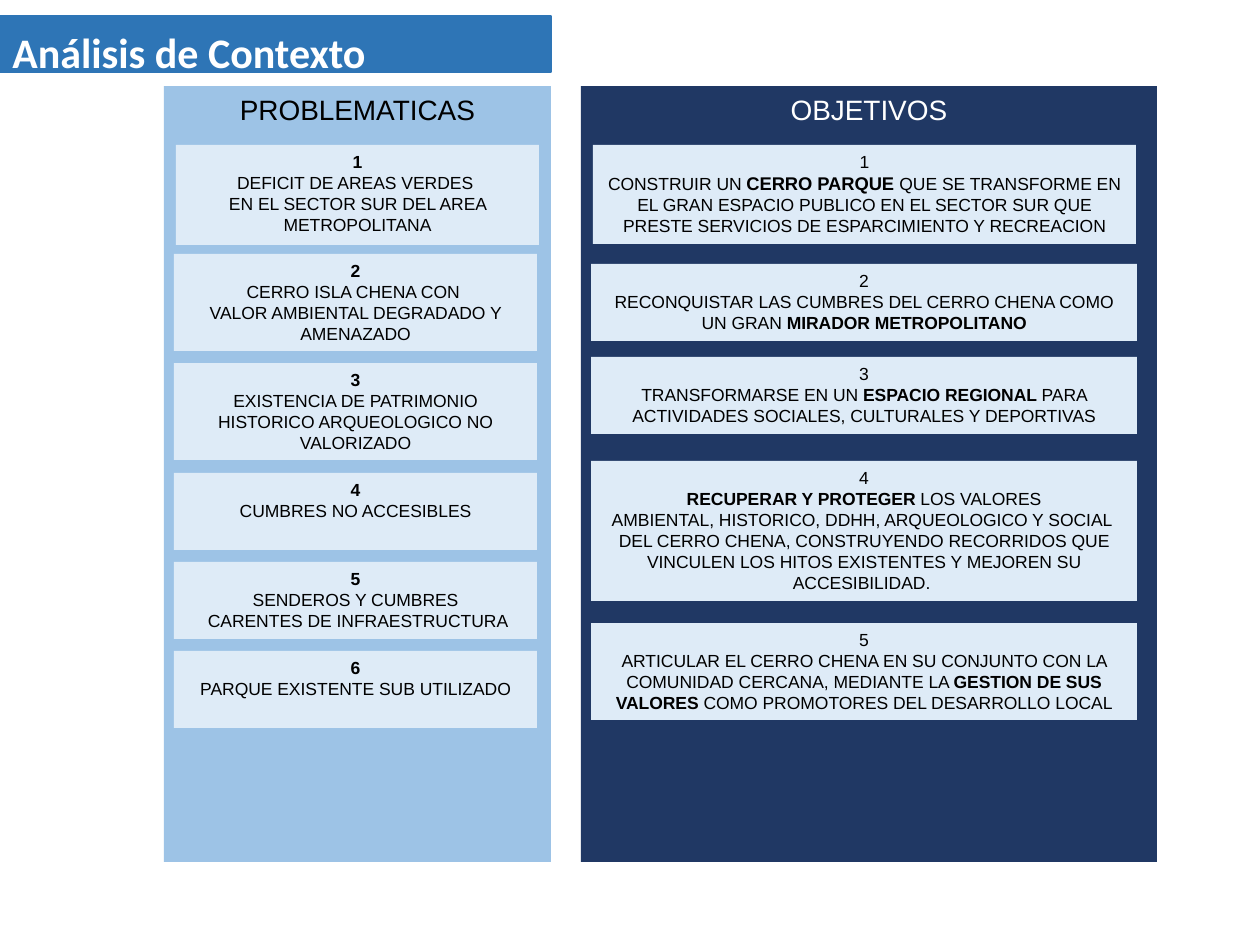
import pptx
import pptx.dml.color
import pptx.enum.shapes
import pptx.enum.text
import pptx.util

RGB = pptx.dml.color.RGBColor
ALIGN = pptx.enum.text.PP_ALIGN
BLACK = RGB(0x00, 0x00, 0x00)
WHITE = RGB(0xFF, 0xFF, 0xFF)
TITLE_BLUE = RGB(0x2E, 0x75, 0xB6)
LIGHT_BLUE = RGB(0x9D, 0xC3, 0xE6)
PALE_BLUE = RGB(0xDE, 0xEB, 0xF7)
NAVY = RGB(0x20, 0x38, 0x64)

PROBLEMS = [
    (176, 145, 363, 100, ["*1*", "DEFICIT DE AREAS VERDES ", "EN EL SECTOR SUR DEL AREA METROPOLITANA"]),
    (174, 254, 363, 97, ["*2*", "CERRO ISLA CHENA CON ", "VALOR AMBIENTAL DEGRADADO Y AMENAZADO"]),
    (174, 363, 363, 97, ["*3*", "EXISTENCIA DE PATRIMONIO HISTORICO ARQUEOLOGICO NO VALORIZADO"]),
    (174, 473, 363, 77, ["*4*", "CUMBRES NO ACCESIBLES"]),
    (174, 562, 363, 77, ["*5*", "SENDEROS Y CUMBRES", " CARENTES DE INFRAESTRUCTURA"]),
    (174, 651, 363, 77, ["*6*", "PARQUE EXISTENTE SUB UTILIZADO"]),
]
GOALS = [
    (593, 145, 543, 99, ["1", "CONSTRUIR UN *CERRO PARQUE *QUE SE TRANSFORME EN EL GRAN ESPACIO PUBLICO "
                         "EN EL SECTOR SUR QUE PRESTE SERVICIOS DE ESPARCIMIENTO Y RECREACION"], 10.5),
    (591, 264, 546, 77, ["2", "RECONQUISTAR LAS CUMBRES DEL CERRO CHENA COMO UN GRAN *MIRADOR METROPOLITANO*"]),
    (591, 357, 546, 77, ["3", "TRANSFORMARSE EN UN *ESPACIO REGIONAL *PARA ACTIVIDADES SOCIALES, "
                         "CULTURALES Y DEPORTIVAS"]),
    (591, 461, 546, 140, ["4", "*RECUPERAR Y PROTEGER *LOS VALORES",
                          "AMBIENTAL, HISTORICO, DDHH, ARQUEOLOGICO Y SOCIAL ",
                          "DEL CERRO CHENA, CONSTRUYENDO RECORRIDOS QUE VINCULEN LOS HITOS "
                          "EXISTENTES Y MEJOREN SU ACCESIBILIDAD. "]),
    (591, 623, 546, 97, ["5", "ARTICULAR EL CERRO CHENA EN SU CONJUNTO CON LA COMUNIDAD CERCANA, MEDIANTE LA "
                         "*GESTION DE SUS VALORES* COMO PROMOTORES DEL DESARROLLO LOCAL"]),
]


class Deck:
    """Slide under construction, with its style and a 126 px per inch scale."""

    PX = 914400 / 126
    FONT = "Arial"

    def __init__(self, width, height):
        self.prs = pptx.Presentation()
        self.prs.slide_width = self.emu(width)
        self.prs.slide_height = self.emu(height)
        self.s = self.prs.slides.add_slide(self.prs.slide_layouts[6])

    def emu(self, px):
        return pptx.util.Emu(round(px * self.PX))

    def box(self, x, y, w, h, fill):
        rect = pptx.enum.shapes.MSO_SHAPE.RECTANGLE
        sp = self.s.shapes.add_shape(rect, *map(self.emu, (x, y, w, h)))
        sp.shadow.inherit = False
        sp.fill.solid()
        sp.fill.fore_color.rgb = fill
        sp.line.fill.background()
        tf = sp.text_frame
        tf.word_wrap = True
        tf.vertical_anchor = pptx.enum.text.MSO_ANCHOR.TOP
        return sp

    def text(self, p, text, size, color=BLACK, name=FONT, align=ALIGN.CENTER, bold_size=None):
        p.alignment = align
        p.font.name = name
        p.font.size = pptx.util.Pt(size)
        p.font.color.rgb = color
        for i, part in enumerate(text.split("*")):
            if part:
                r = p.add_run()
                r.text = part
                if i % 2:
                    r.font.bold = True
                    if bold_size:
                        r.font.size = pptx.util.Pt(bold_size)

    def title(self, x, y, w, h, text):
        sp = self.box(x, y, w, h, TITLE_BLUE)
        sp.line.color.rgb = TITLE_BLUE
        sp.line.width = pptx.util.Pt(0.75)
        sp.text_frame.margin_top = self.emu(10)
        self.text(sp.text_frame.paragraphs[0], f"*{text}*", 24, WHITE, "Calibri", ALIGN.LEFT)

    def panel(self, x, y, w, h, heading, fill, color):
        sp = self.box(x, y, w, h, fill)
        self.text(sp.text_frame.paragraphs[0], heading, 16, color)

    def card(self, x, y, w, h, lines, bold_size=None):
        tf = self.box(x, y, w, h, PALE_BLUE).text_frame
        for i, line in enumerate(lines):
            p = tf.add_paragraph() if i else tf.paragraphs[0]
            self.text(p, line, 10, bold_size=bold_size)


def main():
    deck = Deck(1260, 945)
    deck.panel(164, 86, 387, 776, "PROBLEMATICAS", LIGHT_BLUE, BLACK)
    deck.title(0, 16, 551, 56, "Análisis de Contexto")
    for card in PROBLEMS:
        deck.card(*card)
    deck.panel(581, 86, 576, 776, "OBJETIVOS", NAVY, WHITE)
    for card in GOALS:
        deck.card(*card)
    deck.prs.save("out.pptx")


if __name__ == "__main__":
    main()
